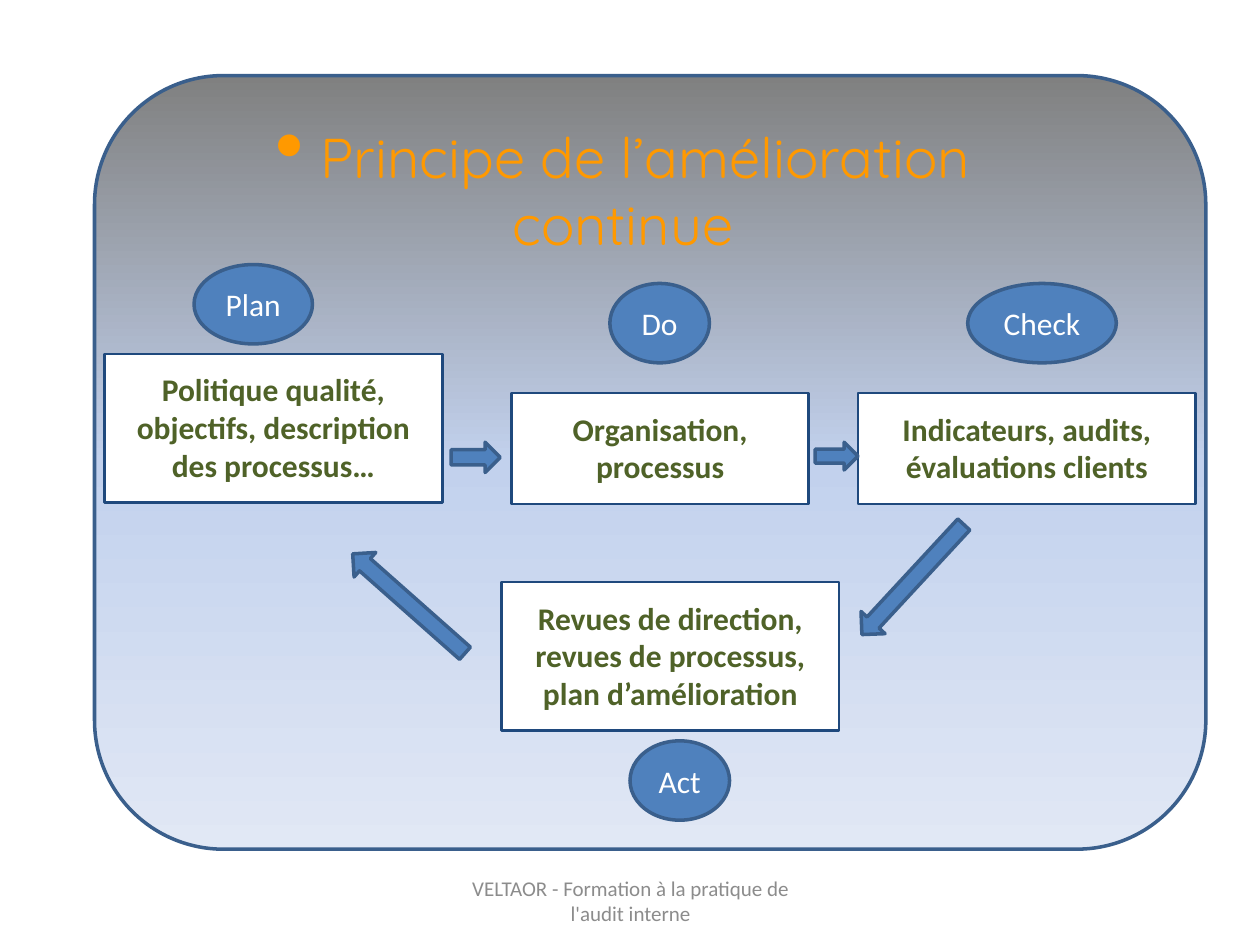
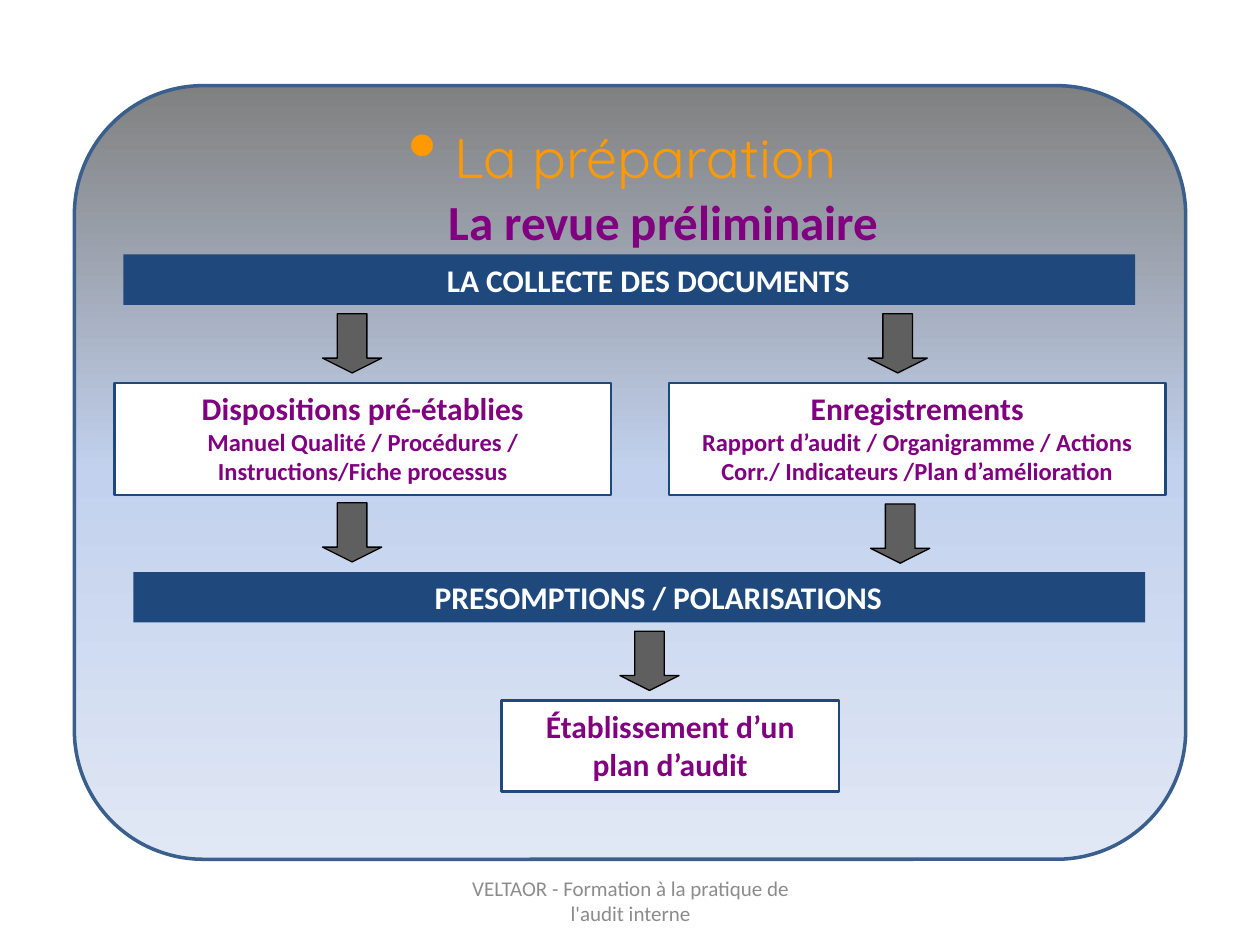
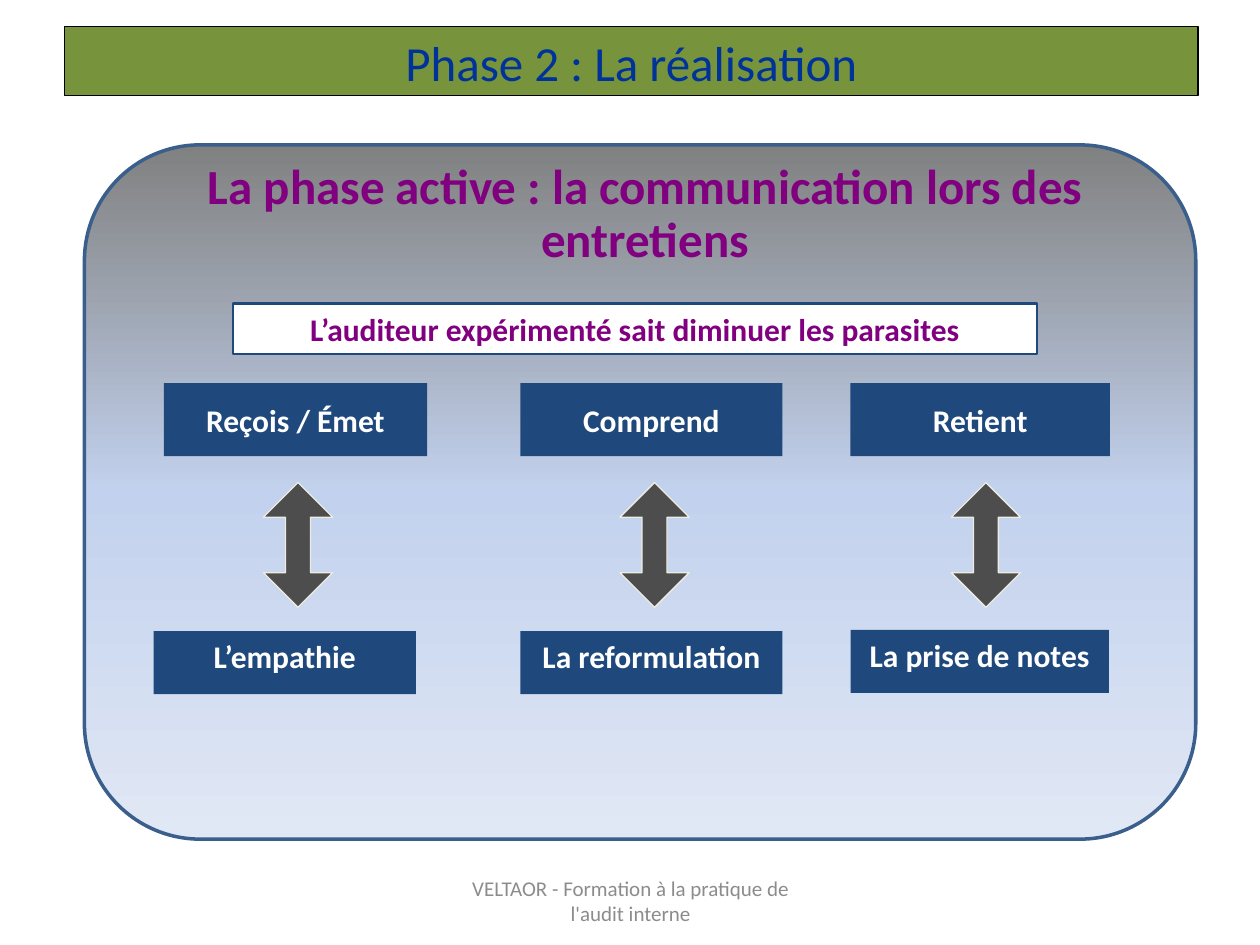
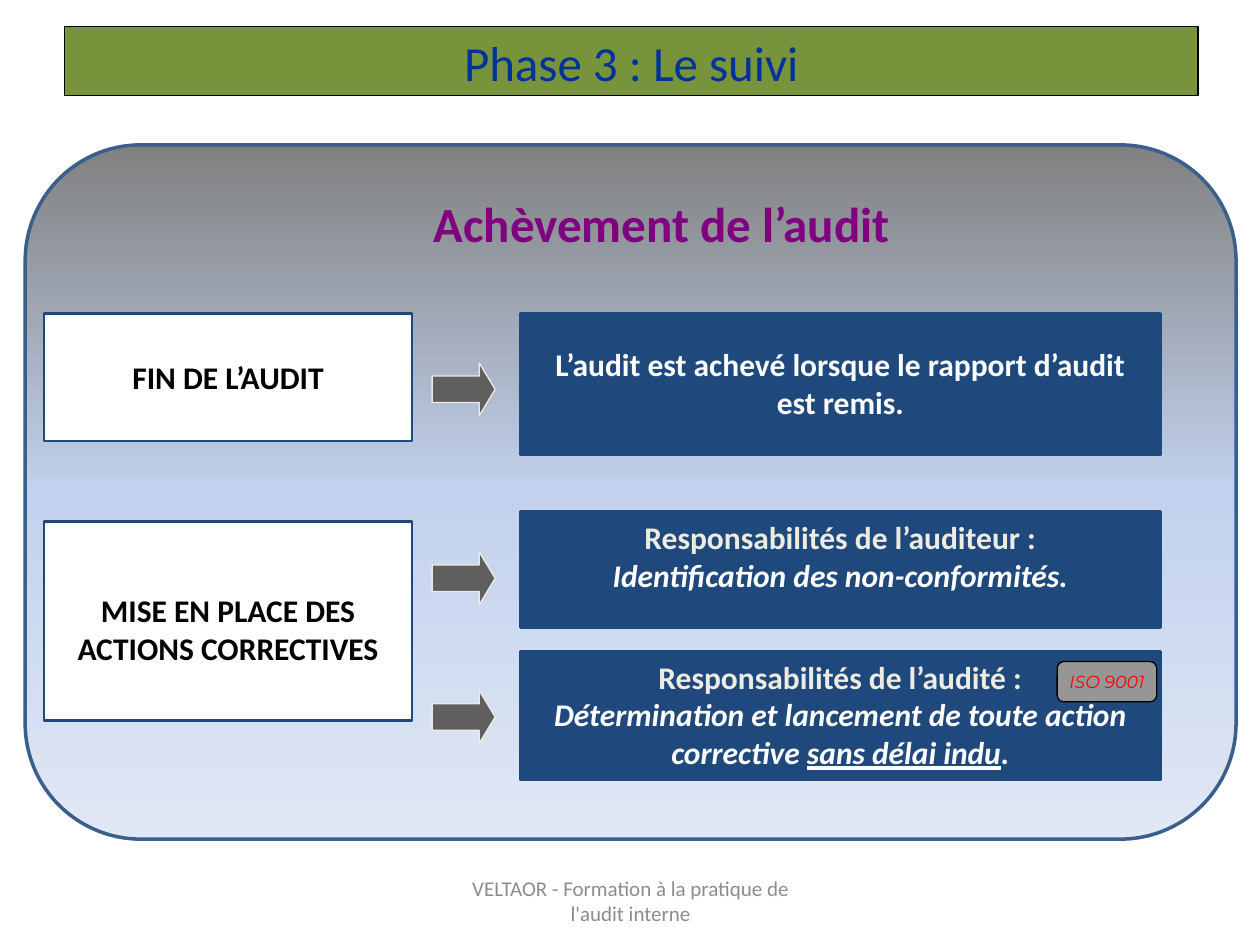
from copy import deepcopy
from dataclasses import dataclass
from typing import NamedTuple

from lxml.etree import SubElement
from pptx import Presentation
from pptx.dml.color import RGBColor
from pptx.enum.shapes import MSO_SHAPE as SHAPE
from pptx.enum.text import MSO_ANCHOR as ANCHOR, PP_ALIGN as ALIGN
from pptx.oxml.ns import qn
from pptx.util import Emu, Pt

# Shared look
EMU_PER_PX = 9144  # 100 px to the inch
NAVY, BLUE, EDGE = "1F497D", "4F81BD", "3A5F8C"
WHITE, BLACK, CREAM = "FFFFFF", "000000", "EEECE1"
PURPLE, OLIVE, ORANGE = "800080", "4F6228", "FF9900"
GREEN, TITLE_BLUE, FOOTER_GREY = "77933C", "003399", "8C8C8C"
ARROW_GREY, DARK_GREY, BADGE_GREY = "5F5F5F", "4D4D4D", "969696"
PANEL_STOPS = ((0, "808080"), (0.5, "C2D1ED"), (1, "E1E8F5"))
FOOTER = "VELTAOR - Formation à la pratique de l'audit interne"


class Box(NamedTuple):
    x: int
    y: int
    w: int
    h: int


class Outline(NamedTuple):
    color: str
    width: float


@dataclass(frozen=True)
class Run:
    text: str
    size: float | None = None
    color: str | None = None
    italic: bool = False
    underline: bool = False


@dataclass(frozen=True)
class Step:
    """A stage of the improvement cycle: its name and its contents."""
    name: str
    oval: Box
    content: str
    card: Box


@dataclass(frozen=True)
class Skill:
    """What the auditor does and the means that supports it."""
    action: str
    action_box: Box
    arrow_x: int
    means: str
    means_box: Box


NAVY_EDGE = Outline(NAVY, 1.5)
BLUE_EDGE = Outline(EDGE, 2)
BLACK_EDGE = Outline(BLACK, 0.75)
CREAM_EDGE = Outline(CREAM, 0.75)


# Drawing helpers
def px(length: float) -> Emu:
    return Emu(round(length * EMU_PER_PX))


def rgb(color: str) -> RGBColor:
    return RGBColor.from_string(color)


def write(shape, text, *, font="Calibri", size=18, color=BLACK, bold=False,
          italic=False, anchor=ANCHOR.TOP, top=5, indent=0, spacing=None,
          bullet=False, wrap=True) -> None:
    """Text is one string, or a list of paragraphs made of runs."""
    frame = shape.text_frame
    frame.word_wrap = wrap
    frame.vertical_anchor = anchor
    frame.margin_left, frame.margin_right = px(10 + indent), px(10)
    frame.margin_top, frame.margin_bottom = px(top), px(5)
    lines = [[Run(text)]] if isinstance(text, str) else text
    for number, runs in enumerate(lines):
        paragraph = frame.add_paragraph() if number else frame.paragraphs[0]
        paragraph.alignment = ALIGN.CENTER
        if spacing:
            paragraph.line_spacing = spacing
        if bullet:
            properties = paragraph._p.get_or_add_pPr()
            SubElement(properties, qn("a:buSzPct"), val="150000")
            SubElement(properties, qn("a:buChar"), char="•")
        for part in runs:
            run = paragraph.add_run()
            run.text = part.text
            run.font.name = font
            run.font.size = Pt(part.size or size)
            run.font.color.rgb = rgb(part.color or color)
            run.font.bold = bold
            run.font.italic = italic or part.italic
            run.font.underline = part.underline


def add_shape(slide, kind, box: Box, fill: str | None = None,
              outline: Outline | None = None, adjust=(), turn=0.0):
    shape = slide.shapes.add_shape(kind, *map(px, box))
    shape.shadow.inherit = False
    shape.rotation = turn
    for index, value in enumerate(adjust):
        shape.adjustments[index] = value
    if fill:
        shape.fill.solid()
        shape.fill.fore_color.rgb = rgb(fill)
    if outline:
        shape.line.color.rgb = rgb(outline.color)
        shape.line.width = Pt(outline.width)
    else:
        shape.line.fill.background()
    return shape


def add_label(slide, box: Box, text, **style) -> None:
    write(slide.shapes.add_textbox(*map(px, box)), text, **style)


def add_panel(slide, box: Box) -> None:
    panel = add_shape(slide, SHAPE.ROUNDED_RECTANGLE, box, outline=BLUE_EDGE)
    panel.fill.gradient()
    panel.fill.gradient_angle = 270
    stop_list = panel._element.spPr.find(qn("a:gradFill")).find(qn("a:gsLst"))
    stop_list.append(deepcopy(stop_list[0]))
    for stop, (position, color) in zip(panel.fill.gradient_stops, PANEL_STOPS):
        stop.position = position
        stop.color.rgb = rgb(color)


def add_card(slide, box: Box, text, **style) -> None:
    card = add_shape(slide, SHAPE.RECTANGLE, box, WHITE, NAVY_EDGE)
    write(card, text, **{"bold": True, "color": PURPLE, **style})


def add_navy(slide, box: Box, text, outline=None, **style) -> None:
    block = add_shape(slide, SHAPE.RECTANGLE, box, NAVY, outline)
    write(block, text, color=WHITE, bold=True, **style)


def add_heading(slide, box: Box, text: str, indent=0) -> None:
    add_label(slide, box, text, size=28, color=PURPLE, bold=True,
              anchor=ANCHOR.MIDDLE, spacing=0.9, indent=indent)


def add_topic(slide, text: str, height: int) -> None:
    add_label(slide, Box(146, 92, 697, height), f" {text}", font="Quicksand",
              size=32, color=ORANGE, bullet=True)


def add_phase(slide, text: str) -> None:
    band = add_shape(slide, SHAPE.RECTANGLE, Box(51, 21, 900, 55), GREEN, BLACK_EDGE)
    write(band, text, size=28, color=TITLE_BLUE)


def start_slide(deck, panel: Box):
    slide = deck.slides.add_slide(deck.slide_layouts[6])
    add_panel(slide, panel)
    add_label(slide, Box(342, 695, 317, 40), FOOTER, size=12,
              color=FOOTER_GREY, anchor=ANCHOR.MIDDLE)
    return slide


# Slide 1: the improvement cycle
STEPS = (
    Step("Plan", Box(154, 210, 94, 63),
         "Politique qualité, objectifs, description des processus…",
         Box(83, 281, 268, 118)),
    Step("Do", Box(484, 225, 79, 63),
         "Organisation, processus", Box(406, 312, 236, 88)),
    Step("Check", Box(768, 225, 118, 63),
         "Indicateurs, audits, évaluations clients", Box(681, 312, 268, 88)),
    Step("Act", Box(500, 588, 79, 63),
         "Revues de direction, revues de processus, plan d’amélioration",
         Box(398, 462, 268, 118)),
)
CYCLE_ARROWS = (
    (Box(358, 351, 39, 24), 0),
    (Box(647, 351, 34, 22), 0),
    (Box(665, 447, 119, 26), 132.8),
    (Box(265, 466, 119, 26), 221.5),
)


def build_cycle(deck) -> None:
    slide = start_slide(deck, Box(75, 60, 882, 614))
    add_topic(slide, "Principe de l’amélioration continue", 118)
    for step in STEPS:
        add_card(slide, step.card, step.content, color=OLIVE, top=13)
        oval = add_shape(slide, SHAPE.OVAL, step.oval, BLUE, BLUE_EDGE)
        write(oval, step.name, color=WHITE, anchor=ANCHOR.MIDDLE)
    for box, turn in CYCLE_ARROWS:
        add_shape(slide, SHAPE.RIGHT_ARROW, box, BLUE, BLUE_EDGE, turn=turn)


# Slide 2: the preliminary review
DOCUMENTS = (
    (91, "Dispositions pré-établies",
     "Manuel Qualité / Procédures / Instructions/Fiche processus"),
    (531, "Enregistrements",
     "Rapport d’audit / Organigramme / Actions Corr./ Indicateurs /Plan d’amélioration"),
)
REVIEW_ARROWS = ((256, 249), (689, 249), (256, 399), (691, 400), (492, 501))


def build_review(deck) -> None:
    slide = start_slide(deck, Box(59, 68, 882, 614))
    add_topic(slide, "La préparation", 64)
    add_heading(slide, Box(287, 155, 479, 47), "La revue préliminaire")
    add_navy(slide, Box(98, 202, 803, 40), "LA COLLECTE DES DOCUMENTS", indent=30)
    add_navy(slide, Box(106, 454, 803, 40), "PRESOMPTIONS / POLARISATIONS", indent=30)
    for x, family, examples in DOCUMENTS:
        add_card(slide, Box(x, 304, 394, 89), [[Run(family)], [Run(examples, size=14)]])
    for x, y in REVIEW_ARROWS:
        add_shape(slide, SHAPE.DOWN_ARROW, Box(x, y, 47, 47), ARROW_GREY,
                  BLACK_EDGE, adjust=(0.5, 0.25))
    add_card(slide, Box(398, 556, 268, 72), "Établissement d’un plan d’audit")


# Slide 3: communication during interviews
SKILLS = (
    Skill("Reçois / Émet", Box(130, 304, 209, 58), 209,
          "L’empathie", Box(122, 501, 208, 50)),
    Skill("Comprend", Box(413, 304, 208, 58), 492,
          "La reformulation", Box(413, 501, 208, 50)),
    Skill("Retient", Box(675, 304, 206, 58), 755,
          "La prise de notes", Box(675, 500, 205, 50)),
)


def build_communication(deck) -> None:
    slide = start_slide(deck, Box(67, 115, 882, 551))
    add_phase(slide, "Phase 2 : La réalisation")
    add_heading(slide, Box(75, 147, 874, 47),
                "La phase active : la communication lors des entretiens")
    add_card(slide, Box(185, 241, 638, 40),
             "L’auditeur expérimenté sait diminuer les parasites")
    for skill in SKILLS:
        add_navy(slide, skill.action_box, skill.action, anchor=ANCHOR.MIDDLE)
        add_shape(slide, SHAPE.UP_DOWN_ARROW, Box(skill.arrow_x, 383, 55, 99),
                  DARK_GREY, CREAM_EDGE, adjust=(0.5, 0.36))
        add_navy(slide, skill.means_box, skill.means)


# Slide 4: closing the audit
DUTIES = (
    (406, 92, "Responsabilités de l’auditeur :",
     [Run("Identification des non-conformités.", italic=True)]),
    (517, 102, "Responsabilités de l’audité :",
     [Run("Détermination et lancement de toute action corrective ", italic=True),
      Run("sans délai indu", italic=True, underline=True),
      Run(".", italic=True)]),
)


def build_follow_up(deck) -> None:
    slide = start_slide(deck, Box(20, 115, 961, 551))
    add_phase(slide, "Phase 3 : Le suivi")
    add_heading(slide, Box(211, 156, 550, 47), "Achèvement de l’audit", indent=78)
    add_card(slide, Box(35, 249, 292, 101), "FIN DE L’AUDIT", color=BLACK, top=35)
    add_card(slide, Box(35, 414, 292, 158), "MISE EN PLACE DES ACTIONS CORRECTIVES",
             color=BLACK, top=55)
    add_navy(slide, Box(413, 249, 508, 112),
             "L’audit est achevé lorsque le rapport d’audit est remis.",
             NAVY_EDGE, top=25)
    for y, height, owner, duty in DUTIES:
        add_navy(slide, Box(413, y, 508, height), [[Run(owner, color=CREAM)], duty],
                 NAVY_EDGE)
    for y in (288, 438, 548):
        add_shape(slide, SHAPE.RIGHT_ARROW, Box(343, y, 50, 42), ARROW_GREY,
                  CREAM_EDGE, adjust=(0.5, 0.3))
    badge = add_shape(slide, SHAPE.ROUNDED_RECTANGLE, Box(839, 525, 79, 32),
                      BADGE_GREY, BLACK_EDGE)
    write(badge, "ISO 9001", font="Montserrat", size=10, color="FF0000",
          italic=True, anchor=ANCHOR.MIDDLE, wrap=False)


def main() -> None:
    deck = Presentation()
    deck.slide_width, deck.slide_height = px(1000), px(750)
    for build in (build_cycle, build_review, build_communication, build_follow_up):
        build(deck)
    deck.save("out.pptx")


if __name__ == "__main__":
    main()
